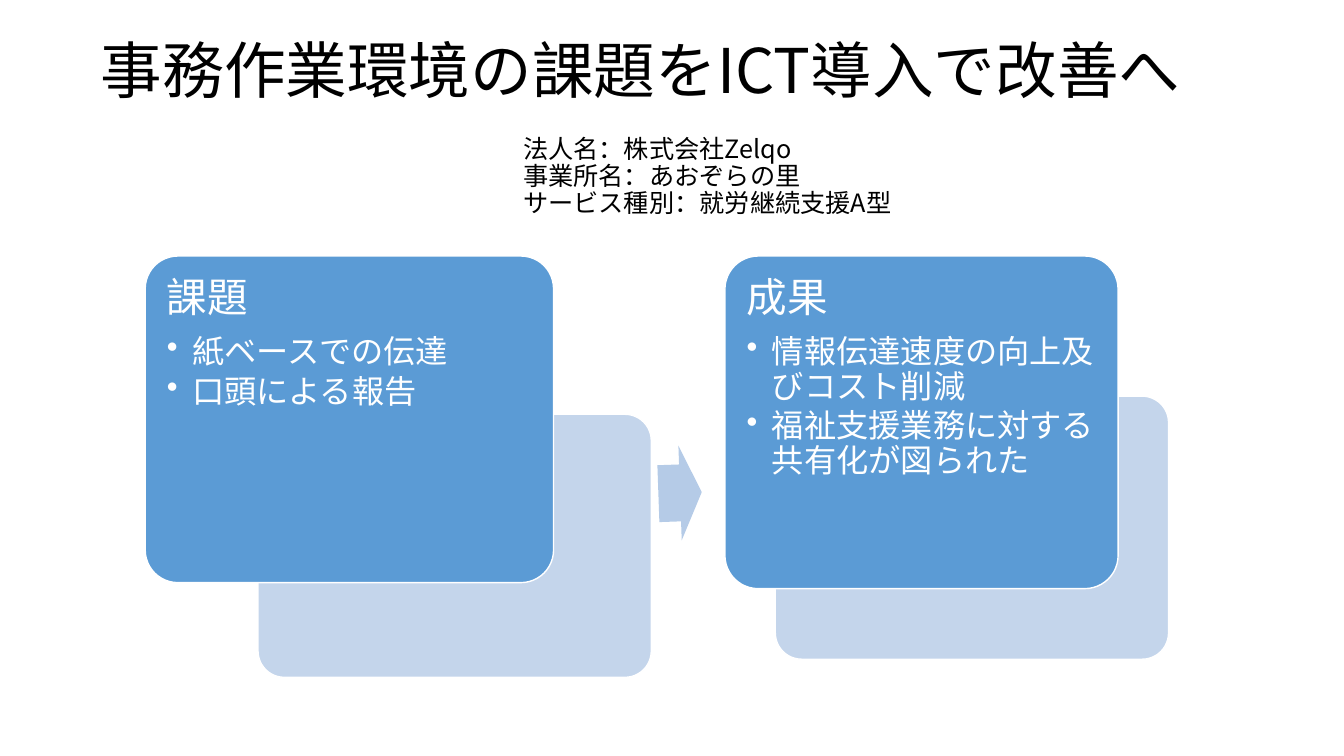
from lxml import etree
from pptx import Presentation
from pptx.dml.color import RGBColor
from pptx.enum import shapes, text
from pptx.oxml import ns
from pptx.util import Inches, Pt

FONT = "Noto Sans CJK JP"
COLORS = {
    "ink": "000000",
    "white": "FFFFFF",
    "card": "5B9BD5",
    "backing": "C4D5EB",
    "arrow": "B5CBE7",
}
DETAILS = ["法人名：株式会社Zelqo", "事業所名：あおぞらの里", "サービス種別：就労継続支援A型"]
ISSUES = ["紙ベースでの伝達", "口頭による報告"]
RESULTS = ["情報伝達速度の向上及びコスト削減", "福祉支援業務に対する共有化が図られた"]


def color(name):
    return RGBColor.from_string(COLORS[name])


def add_bullet(paragraph):
    properties = paragraph._p.get_or_add_pPr()
    properties.set("marL", str(Inches(0.25)))
    properties.set("indent", str(Inches(-0.25)))
    etree.SubElement(properties, ns.qn("a:buChar")).set("char", "•")


def format_paragraph(paragraph, size, color_name, space_after=0):
    paragraph.alignment = text.PP_ALIGN.LEFT
    paragraph.line_spacing = 0.9
    paragraph.space_before = Pt(0)
    paragraph.space_after = Pt(space_after)
    font = paragraph.font
    font.size = Pt(size)
    font.color.rgb = color(color_name)
    font.name = FONT
    defaults = paragraph._p.pPr.find(ns.qn("a:defRPr"))
    etree.SubElement(defaults, ns.qn("a:ea")).set("typeface", FONT)


def fill_frame(frame, lines, size, color_name, anchor):
    frame.word_wrap = True
    frame.auto_size = text.MSO_AUTO_SIZE.NONE
    frame.vertical_anchor = anchor
    frame.text = "\n".join(lines)
    for paragraph in frame.paragraphs:
        format_paragraph(paragraph, size, color_name)


def add_title(slide, left, top, width, height):
    title = slide.shapes.title
    title.left, title.top = Inches(left), Inches(top)
    title.width, title.height = Inches(width), Inches(height)
    fill_frame(title.text_frame, ["事務作業環境の課題をICT導入で改善へ"], 44, "ink",
               text.MSO_ANCHOR.MIDDLE)


def add_details(slide, left, top, width, height):
    box = slide.shapes.add_textbox(Inches(left), Inches(top), Inches(width), Inches(height))
    fill_frame(box.text_frame, DETAILS, 18, "ink", text.MSO_ANCHOR.MIDDLE)


def add_panel(slide, kind, left, top, width, height, fill):
    panel = slide.shapes.add_shape(kind, Inches(left), Inches(top), Inches(width), Inches(height))
    panel.shadow.inherit = False
    panel.fill.solid()
    panel.fill.fore_color.rgb = color(fill)
    panel.line.fill.background()
    return panel


def add_rounded(slide, left, top, width, height, fill):
    panel = add_panel(slide, shapes.MSO_SHAPE.ROUNDED_RECTANGLE, left, top, width, height, fill)
    panel.adjustments[0] = 0.1
    panel.line.color.rgb = color("white")
    panel.line.width = Pt(1)
    return panel


def add_card(slide, left, top, width, height, shift_x, shift_y, heading, items):
    add_rounded(slide, left + shift_x, top + shift_y, 3.9, 2.61, "backing")
    frame = add_rounded(slide, left, top, width, height, "card").text_frame
    frame.margin_left = frame.margin_right = Inches(0.12)
    frame.margin_top = frame.margin_bottom = Inches(0.12)
    frame.word_wrap = True
    frame.vertical_anchor = text.MSO_ANCHOR.TOP
    frame.text = heading
    format_paragraph(frame.paragraphs[0], 29, "white", 10)
    for item in items:
        paragraph = frame.add_paragraph()
        paragraph.text = item
        paragraph.level = 1
        add_bullet(paragraph)
        format_paragraph(paragraph, 23, "white", 3.5)


def add_arrow(slide, left, top, width, height):
    arrow = add_panel(slide, shapes.MSO_SHAPE.RIGHT_ARROW, left, top, width, height, "arrow")
    arrow.adjustments[0] = 0.6
    arrow.adjustments[1] = 0.5
    arrow.rotation = 358


def main():
    presentation = Presentation()
    presentation.slide_width = Inches(13.33)
    presentation.slide_height = Inches(7.5)
    slide = presentation.slides.add_slide(presentation.slide_layouts[5])
    add_title(slide, 0.9, 0.23, 11.5, 0.99)
    add_card(slide, 1.44, 2.54, 4.05, 3.24, 1.12, 1.57, "課題", ISSUES)
    add_arrow(slide, 6.53, 4.42, 0.43, 0.94)
    add_card(slide, 7.19, 2.54, 3.9, 3.3, 0.5, 1.39, "成果", RESULTS)
    add_details(slide, 5.09, 1.22, 6.21, 1.08)
    presentation.save("out.pptx")


if __name__ == "__main__":
    main()
